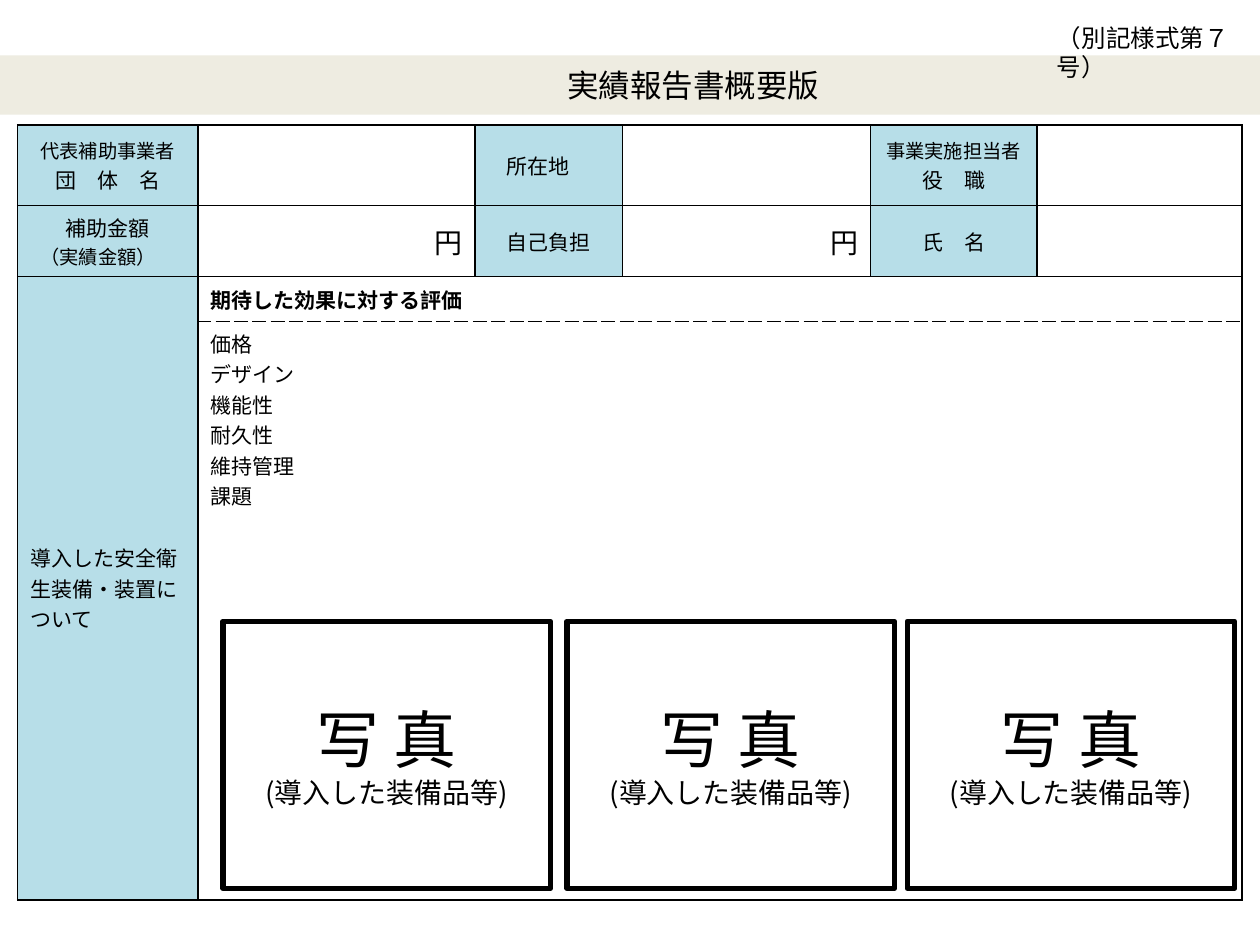
from lxml import etree
from pptx import Presentation
from pptx.dml.color import RGBColor
from pptx.enum.shapes import MSO_SHAPE
from pptx.enum.text import MSO_ANCHOR, MSO_AUTO_SIZE, PP_ALIGN
from pptx.oxml import parse_xml
from pptx.oxml.ns import nsdecls, qn
from pptx.util import Pt

BLACK = RGBColor(0, 0, 0)
BEIGE = RGBColor(0xEE, 0xEC, 0xE1)
BLUE = RGBColor(0xB7, 0xDE, 0xE8)
CJK = "Noto Sans CJK JP"
LEFT, CENTER, RIGHT = PP_ALIGN.LEFT, PP_ALIGN.CENTER, PP_ALIGN.RIGHT


def write(tf, lines, align=LEFT, font=CJK, bold=False):
    for i, (text, size) in enumerate(lines):
        p = tf.paragraphs[0] if i == 0 else tf.add_paragraph()
        p.alignment = align
        r = p.add_run()
        r.text = text
        r.font.size = Pt(size)
        r.font.name = font
        r.font.bold = bold
        r.font.color.rgb = BLACK
        etree.SubElement(r.font._element, qn("a:ea")).set("typeface", CJK)


def add_border(cell, side, width, dash):
    cell._tc.get_or_add_tcPr().append(parse_xml(
        f'<a:ln{side} {nsdecls("a")} w="{Pt(width)}"><a:solidFill><a:srgbClr val="{BLACK}"/>'
        f'</a:solidFill><a:prstDash val="{dash}"/></a:ln{side}>'))


prs = Presentation()
prs.slide_width, prs.slide_height = Pt(720), Pt(540)
s = prs.slides.add_slide(prs.slide_layouts[5])

title = s.shapes.title
title.left, title.top, title.width, title.height = Pt(0), Pt(31.7), Pt(720), Pt(33.8)
title.fill.solid()
title.fill.fore_color.rgb = BEIGE
tf = title.text_frame
tf.auto_size = MSO_AUTO_SIZE.NONE
tf.vertical_anchor = MSO_ANCHOR.MIDDLE
tf.margin_left = Pt(79.2)
write(tf, [("実績報告書概要版", 18)], CENTER, "Calibri")

col_widths = [103, 158.4, 84.2, 141.8, 95, 117.4]
row_heights = [46.1, 39.6, 25.9, 330.5]
table = s.shapes.add_table(4, 6, Pt(10.1), Pt(71.3), Pt(699.8), Pt(442.1)).table
table.first_row = table.horz_banding = False
for col, width in zip(table.columns, col_widths):
    col.width = Pt(width)
for row, height in zip(table.rows, row_heights):
    row.height = Pt(height)

table.cell(2, 0).merge(table.cell(3, 0))
for row in (2, 3):
    table.cell(row, 1).merge(table.cell(row, 5))

for row in range(4):
    for col in range(6):
        cell = table.cell(row, col)
        cell.vertical_anchor = MSO_ANCHOR.TOP if (row, col) == (3, 1) else MSO_ANCHOR.MIDDLE
        for side in "LRTB":
            dashed = col > 0 and (row, side) in ((2, "B"), (3, "T"))
            add_border(cell, side, *((0.5, "sysDash") if dashed else (1, "solid")))
        if col == 0 or (row < 2 and col in (2, 4)):
            cell.fill.solid()
            cell.fill.fore_color.rgb = BLUE
        else:
            cell.fill.background()

headings = {
    (0, 0): [("代表補助事業者", 11), ("団　体　名", 12)],
    (0, 2): [("所在地　", 12)],
    (0, 4): [("事業実施担当者", 11), ("役　職", 12)],
    (1, 0): [("補助金額", 12), ("（実績金額）　", 11)],
    (1, 2): [("自己負担", 12)],
    (1, 4): [("氏　名", 12)],
}
for (row, col), lines in headings.items():
    write(table.cell(row, col).text_frame, lines, CENTER)
for col in (1, 3):
    write(table.cell(1, col).text_frame, [("円", 16)], RIGHT)
write(table.cell(2, 0).text_frame, [("導入した安全衛生装備・装置について", 12)])
write(table.cell(2, 1).text_frame, [("期待した効果に対する評価", 12)], bold=True)
criteria = ["価格", "デザイン", "機能性", "耐久性", "維持管理", "課題"]
write(table.cell(3, 1).text_frame, [(text, 12) for text in criteria], font="Calibri")

tf = s.shapes.add_textbox(Pt(596.9), Pt(9.4), Pt(123.1), Pt(24.5)).text_frame
tf.word_wrap = True
write(tf, [("（別記様式第７号）", 14)], font="Calibri")

for left in (127.4, 324, 518.4):
    sp = s.shapes.add_shape(MSO_SHAPE.RECTANGLE, Pt(left), Pt(355), Pt(187.2), Pt(152.6))
    sp.shadow.inherit = False
    sp.fill.background()
    sp.line.color.rgb = BLACK
    sp.line.width = Pt(3)
    tf = sp.text_frame
    tf.word_wrap = True
    tf.vertical_anchor = MSO_ANCHOR.MIDDLE
    write(tf, [("写 真", 36), ("(導入した装備品等)", 16)], CENTER)

prs.save("out.pptx")
